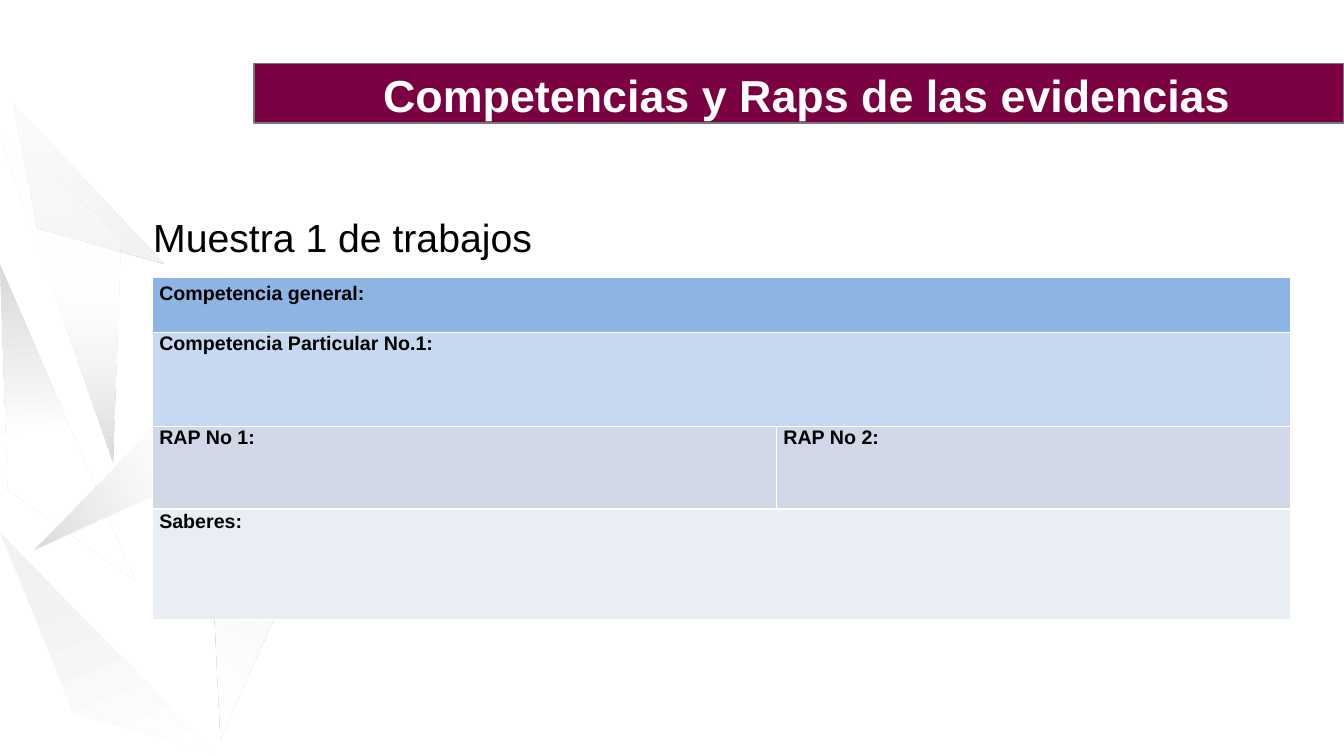
from dataclasses import dataclass

from lxml.etree import SubElement
from pptx import Presentation
from pptx.dml.color import RGBColor
from pptx.enum.text import MSO_ANCHOR as Anchor, MSO_AUTO_SIZE as AutoSize, PP_ALIGN as Align
from pptx.oxml.ns import qn
from pptx.slide import Slide
from pptx.util import Emu, Pt

PX = 9144
FONT = "Arial"


@dataclass(frozen=True)
class Stop:
    pos: int
    color: str
    opacity: int = 100


@dataclass(frozen=True)
class Shard:
    points: tuple[tuple[int, int], ...]
    angle: float
    stops: tuple[Stop, Stop]


@dataclass(frozen=True)
class CellSpec:
    text: str
    fill: str
    top: int = 0
    span: int = 1
    spacing: float | None = None
    after: int | None = None


@dataclass(frozen=True)
class TableSpec:
    left: int
    top: int
    cols: tuple[int, ...]
    rows: tuple[int, ...]
    cells: tuple[tuple[CellSpec, ...], ...]


SHARDS = (
    Shard(((37, 226), (13, 103), (162, 261)), 79.6,
          (Stop(19, "F2F2F2", 32), Stop(97, "F2F2F2"))),
    Shard(((120, 234), (112, 458), (0, 135)), 270,
          (Stop(0, "D9D9D9"), Stop(55, "FFFFFF", 27))),
    Shard(((274, 608), (219, 733), (208, 509)), 294,
          (Stop(19, "FFFFFF", 51), Stop(97, "F2F2F2"))),
    Shard(((8, 486), (0, 262), (134, 576)), 86,
          (Stop(0, "D9D9D9"), Stop(55, "FFFFFF"))),
    Shard(((73, 707), (0, 528), (214, 748)), 68.4,
          (Stop(25, "F2F2F2"), Stop(100, "FFFFFF"))),
    Shard(((237, 452), (34, 545), (272, 301)), 333.5,
          (Stop(0, "D9D9D9"), Stop(55, "FFFFFF", 43))),
)

TABLES = (
    TableSpec(151, 275, (1129,), (55, 93), (
        (CellSpec("Competencia general:", "8EB4E3", top=5),),
        (CellSpec("Competencia Particular No.1:", "C6D9F1"),),
    )),
    TableSpec(151, 423, (619, 510), (82, 110), (
        (CellSpec("RAP No 1:", "D0D8E8"), CellSpec("RAP No 2:", "D0D8E8")),
        (CellSpec("Saberes:", "E9EDF4", span=2, spacing=1.07, after=8),),
    )),
)


def px(n: int) -> Emu:
    return Emu(n * PX)


def rgb(color: str) -> RGBColor:
    return RGBColor.from_string(color)


def add_run(p, text: str, size: int, color: str, bold: bool = False) -> None:
    r = p.add_run()
    r.text = text
    r.font.name = FONT
    r.font.size = Pt(size)
    r.font.bold = bold
    r.font.color.rgb = rgb(color)


def set_frame(tf, left: int, top: int) -> None:
    tf.word_wrap = True
    tf.auto_size = AutoSize.NONE
    tf.vertical_anchor = Anchor.TOP
    tf.margin_left, tf.margin_top = px(left), px(top)
    tf.margin_right = tf.margin_bottom = 0


def add_shard(slide: Slide, shard: Shard) -> None:
    first, *rest = shard.points
    builder = slide.shapes.build_freeform(*first, scale=PX)
    builder.add_line_segments(rest, close=True)
    sp = builder.convert_to_shape()
    sp.shadow.inherit = False
    sp.line.fill.background()
    sp.fill.gradient()
    grad = sp._element.spPr.find(qn("a:gradFill"))
    for child in list(grad):
        grad.remove(child)
    stops = SubElement(grad, qn("a:gsLst"))
    for stop in shard.stops:
        gs = SubElement(stops, qn("a:gs"), pos=str(stop.pos * 1000))
        clr = SubElement(gs, qn("a:srgbClr"), val=stop.color)
        if stop.opacity < 100:
            SubElement(clr, qn("a:alpha"), val=str(stop.opacity * 1000))
    SubElement(grad, qn("a:lin"), ang=str(round(shard.angle * 60000)), scaled="0")


def add_table(slide: Slide, spec: TableSpec) -> None:
    table = slide.shapes.add_table(
        len(spec.rows), len(spec.cols), px(spec.left), px(spec.top),
        px(sum(spec.cols)), px(sum(spec.rows))).table
    table.first_row = table.horz_banding = False
    for col, width in zip(table.columns, spec.cols):
        col.width = px(width)
    for row, height in zip(table.rows, spec.rows):
        row.height = px(height)
    for i, line in enumerate(spec.cells):
        for j, item in enumerate(line):
            cell = table.cell(i, j)
            if item.span > 1:
                cell.merge(table.cell(i, j + item.span - 1))
            cell.fill.solid()
            cell.fill.fore_color.rgb = rgb(item.fill)
            cell.margin_left = cell.margin_right = px(7)
            cell.margin_top, cell.margin_bottom = px(item.top), 0
            p = cell.text_frame.paragraphs[0]
            if item.spacing:
                p.line_spacing = item.spacing
            if item.after:
                p.space_after = Pt(item.after)
            add_run(p, item.text, 14, "000000", bold=True)


def add_title(slide: Slide) -> None:
    sp = slide.shapes.title
    sp.left, sp.top, sp.width, sp.height = px(252), px(63), px(1081), px(59)
    sp.shadow.inherit = False
    sp.fill.solid()
    sp.fill.fore_color.rgb = rgb("7B0041")
    sp.line.color.rgb = rgb("787878")
    sp.line.width = Pt(0.96)
    set_frame(sp.text_frame, 128, 4)
    p = sp.text_frame.paragraphs[0]
    p.alignment = Align.LEFT
    add_run(p, "Competencias y Raps de las evidencias", 32, "FFFFFF", bold=True)


def add_subtitle(slide: Slide) -> None:
    tf = slide.shapes.add_textbox(px(151), px(210), px(608), px(48)).text_frame
    set_frame(tf, 1, 2)
    p = tf.paragraphs[0]
    p.alignment = Align.JUSTIFY
    add_run(p, "Muestra 1 de trabajos", 28, "000000")


def main() -> None:
    prs = Presentation()
    prs.slide_width, prs.slide_height = px(1333), px(750)
    slide = prs.slides.add_slide(prs.slide_layouts.get_by_name("Title Only"))
    for shard in SHARDS:
        add_shard(slide, shard)
    for spec in TABLES:
        add_table(slide, spec)
    add_subtitle(slide)
    add_title(slide)
    prs.save("out.pptx")


if __name__ == "__main__":
    main()
